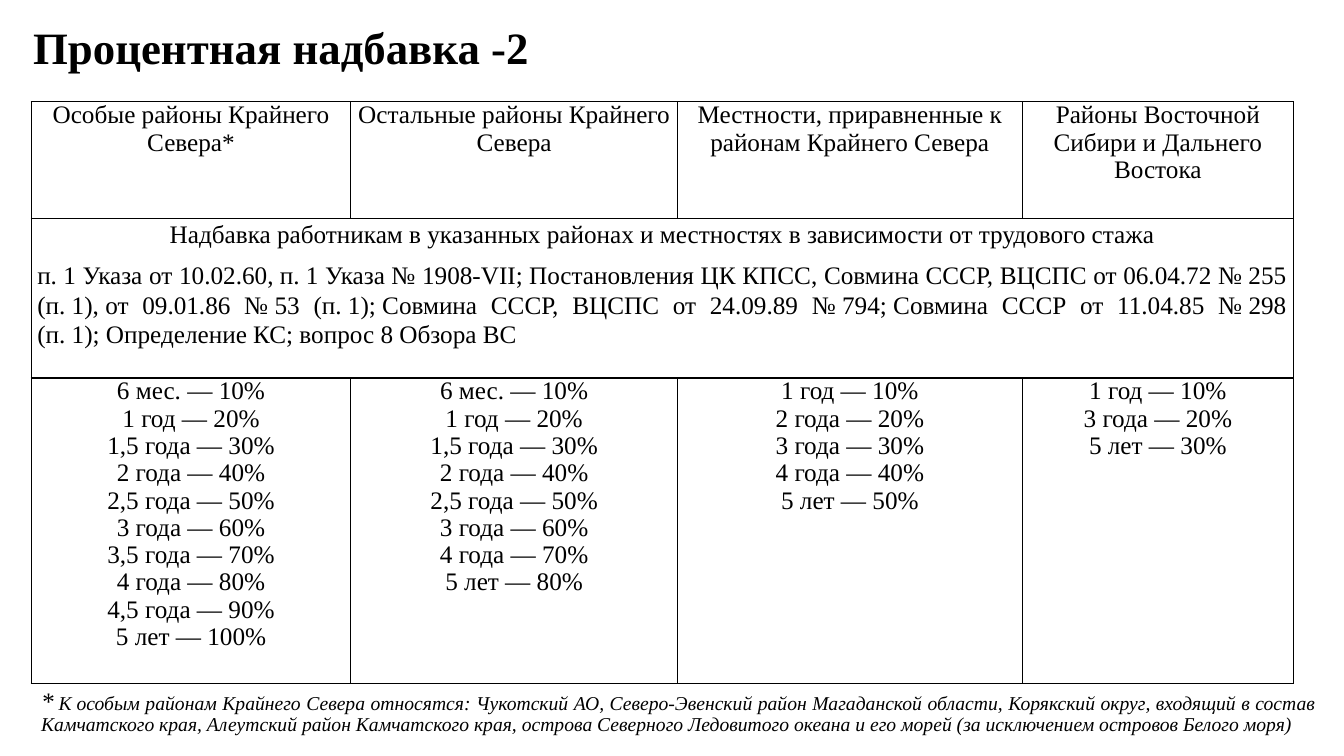
from lxml import etree
from pptx import Presentation
from pptx.dml.color import RGBColor
from pptx.enum.text import MSO_ANCHOR, PP_ALIGN as Align
from pptx.oxml.ns import qn
from pptx.util import Inches, Pt

FONT = "Times New Roman"
BLACK = "000000"
LEFT = 0.31
COLUMN_WIDTHS = (3.17, 3.24, 3.42, 2.69)
ROW_HEIGHTS = (1.16, 1.58, 3.03)
LINE = Pt(19.5)

REGIONS = (
    ("Особые районы Крайнего Севера*", 22.5,
     ("6~мес.", "1~год", "1,5~года", "2~года", "2,5~года",
      "3~года", "3,5~года", "4~года", "4,5~года", "5~лет")),
    ("Остальные районы Крайнего Севера", 22.5,
     ("6~мес.", "1~год", "1,5~года", "2~года", "2,5~года",
      "3~года", "4~года", "5~лет")),
    ("Местности, приравненные к районам Крайнего Севера", 22.5,
     ("1~год", "2~года", "3~года", "4~года", "5~лет")),
    ("Районы Восточной Сибири и Дальнего Востока", 8,
     ("1~год", "3~года", "5~лет")),
)
BASIS_TITLE = ("Надбавка работникам в указанных районах и местностях "
               "в зависимости от трудового стажа")
BASIS = ("п.~1 Указа от 10.02.60,~п.~1 Указа~№ 1908-VII;~Постановления ЦК КПСС, "
         "Совмина СССР, ВЦСПС от 06.04.72 №~255 (п.~1),~от 09.01.86 №~53 (п.~1);~"
         "Совмина СССР, ВЦСПС от 24.09.89 №~794;~Совмина СССР от 11.04.85 №~298 "
         "(п.~1);~Определение КС;~вопрос~8 Обзора ВС")
FOOTNOTE = ("~К~особым районам Крайнего Севера относятся: Чукотский АО, "
            "Северо-Эвенский район Магаданской области, Корякский округ, входящий "
            "в состав Камчатского края, Алеутский район Камчатского края, острова "
            "Северного Ледовитого океана и его морей "
            "(за исключением островов Белого моря)")


def color(value):
    return RGBColor.from_string(value)


def add_span(para, text, size=None):
    """Add a run in which each tilde stands for a no-break space."""
    span = para.add_run()
    span.text = text.replace("~", chr(160))
    if size:
        span.font.size = Pt(size)


def style(para, size, align=Align.LEFT, spacing=None, after=0, bold=None, italic=None):
    para.alignment = align
    para.line_spacing = spacing
    para.space_after = Pt(after)
    font = para.font
    font.name, font.size, font.bold, font.italic = FONT, Pt(size), bold, italic
    font.color.rgb = color(BLACK)


def add_text_box(page, left, top, width, height):
    """Return the first paragraph of a new wrapping text box."""
    box = page.shapes.add_textbox(*map(Inches, (left, top, width, height)))
    box.text_frame.word_wrap = True
    return box.text_frame.paragraphs[0]


def add_borders(cell):
    properties = cell._tc.get_or_add_tcPr()
    for index, side in enumerate(("lnL", "lnR", "lnT", "lnB")):
        line = etree.Element(qn(f"a:{side}"), w=str(Pt(1)))
        fill = etree.SubElement(line, qn("a:solidFill"))
        etree.SubElement(fill, qn("a:srgbClr"), val=BLACK)
        properties.insert(index, line)


def fill_cell(cell, lines, after=8):
    """Write centred lines, joined by line breaks, in one paragraph."""
    para = cell.text_frame.paragraphs[0]
    for index, line in enumerate(lines):
        if index:
            para.add_line_break()
        add_span(para, line)
    style(para, 18, Align.CENTER, LINE, after)


def fill_basis(cell):
    frame = cell.text_frame
    title, sources = frame.paragraphs[0], frame.add_paragraph()
    add_span(title, BASIS_TITLE)
    add_span(sources, BASIS)
    style(title, 18, Align.CENTER, 1.07, 8)
    style(sources, 18, Align.JUSTIFY, 1.07, 8)


def add_bonus_table(page):
    table = page.shapes.add_table(
        len(ROW_HEIGHTS), len(COLUMN_WIDTHS), Inches(LEFT), Inches(1.01),
        Inches(sum(COLUMN_WIDTHS)), Inches(sum(ROW_HEIGHTS))).table
    table.first_row = table.horz_banding = False
    for column, width in zip(table.columns, COLUMN_WIDTHS):
        column.width = Inches(width)
    for row, height in zip(table.rows, ROW_HEIGHTS):
        row.height = Inches(height)
    for cell in table.iter_cells():
        cell.margin_left = cell.margin_right = Inches(0.06)
        cell.margin_top = cell.margin_bottom = 0
        cell.vertical_anchor = MSO_ANCHOR.TOP
        cell.fill.background()
        add_borders(cell)

    table.cell(1, 0).merge(table.cell(1, len(COLUMN_WIDTHS) - 1))
    fill_basis(table.cell(1, 0))
    for index, (region, after, terms) in enumerate(REGIONS):
        fill_cell(table.cell(0, index), [region], after)
        rates = [f"{term}~— {step * 10}%" for step, term in enumerate(terms, 1)]
        fill_cell(table.cell(2, index), rates)


def main():
    deck = Presentation()
    deck.slide_width, deck.slide_height = Inches(13.33), Inches(7.5)
    page = deck.slides.add_slide(deck.slide_layouts[6])

    title = add_text_box(page, 0.23, 0.15, 9.33, 1.18)
    add_span(title, "Процентная надбавка -2")
    style(title, 32, bold=True)

    add_bonus_table(page)

    footnote = add_text_box(page, LEFT, 6.84, 12.85, 0.52)
    add_span(footnote, "*", 18)
    add_span(footnote, FOOTNOTE)
    style(footnote, 14, Align.JUSTIFY, Pt(14.7), 8, italic=True)

    deck.save("out.pptx")


if __name__ == "__main__":
    main()
